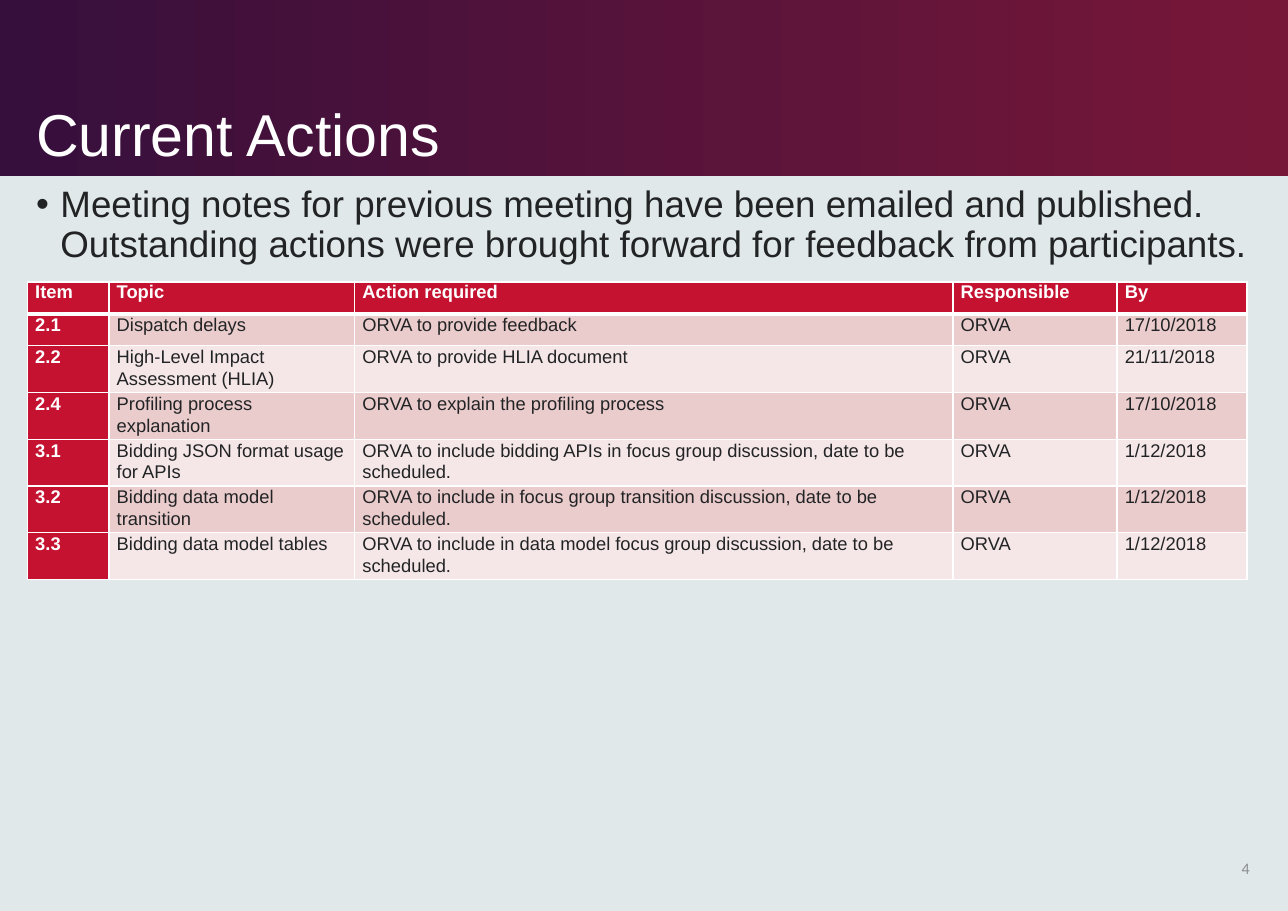
from lxml.etree import SubElement
from pptx import Presentation
from pptx.dml.color import RGBColor
from pptx.enum.shapes import MSO_SHAPE as SHAPE
from pptx.enum.text import MSO_ANCHOR as ANCHOR, PP_ALIGN as ALIGN
from pptx.oxml.ns import qn
from pptx.util import Inches, Pt

WHITE, INK, GREY, RED = "FFFFFF", "222324", "8D8D8E", "C41230"
BANDS = ["F5E7E8", "EACCCD"]
COLUMN_WIDTHS = [0.74, 2.23, 5.43, 1.49, 1.18]
ROW_HEIGHT = 0.29
ACTIONS = [
    ["Item", "Topic", "Action required", "Responsible", "By"],
    ["2.1", "Dispatch delays", "ORVA to provide feedback", "ORVA", "17/10/2018"],
    ["2.2", "High-Level Impact Assessment (HLIA)", "ORVA to provide HLIA document",
     "ORVA", "21/11/2018"],
    ["2.4", "Profiling process explanation", "ORVA to explain the profiling process",
     "ORVA", "17/10/2018"],
    ["3.1", "Bidding JSON format usage for APIs",
     "ORVA to include bidding APIs in focus group discussion, date to be scheduled.",
     "ORVA", "1/12/2018"],
    ["3.2", "Bidding data model transition",
     "ORVA to include in focus group transition discussion, date to be scheduled.",
     "ORVA", "1/12/2018"],
    ["3.3", "Bidding data model tables",
     "ORVA to include in data model focus group discussion, date to be scheduled.",
     "ORVA", "1/12/2018"],
]


def rgb(value):
    return RGBColor.from_string(value)


class SlideBuilder:
    def __init__(self, slide, font="Arial"):
        self.slide = slide
        self.font = font

    def background(self, color):
        fill = self.slide.background.fill
        fill.solid()
        fill.fore_color.rgb = rgb(color)

    def gradient_band(self, x, y, w, h, colors):
        sp = self.slide.shapes.add_shape(
            SHAPE.RECTANGLE, Inches(x), Inches(y), Inches(w), Inches(h))
        sp.shadow.inherit = False
        sp.line.fill.background()
        sp.fill.gradient()
        sp.fill.gradient_angle = 0
        for stop, color in zip(sp.fill.gradient_stops, colors):
            stop.color.rgb = rgb(color)

    def style(self, p, size, color, bold=False, font=None):
        for r in p.runs:
            r.font.name = font or self.font
            r.font.size = Pt(size)
            r.font.bold = bold
            r.font.color.rgb = rgb(color)

    def text(self, text, x, y, w, h, size, color, font=None,
             anchor=ANCHOR.TOP, align=ALIGN.LEFT, spacing=None):
        """Add a wrapped text box and return its paragraph."""
        box = self.slide.shapes.add_textbox(Inches(x), Inches(y), Inches(w), Inches(h))
        tf = box.text_frame
        tf.word_wrap = True
        tf.vertical_anchor = anchor
        tf.text = text
        p = tf.paragraphs[0]
        p.alignment = align
        p.line_spacing = spacing
        self.style(p, size, color, font=font)
        return p

    def bullet(self, p, indent, space_before):
        p.space_before = Pt(space_before)
        pPr = p._p.get_or_add_pPr()
        pPr.set("marL", str(Inches(indent)))
        pPr.set("indent", str(-Inches(indent)))
        SubElement(pPr, qn("a:buFont"), typeface="Arial")
        SubElement(pPr, qn("a:buChar"), char="•")

    def borders(self, cell, **widths):
        """Draw white borders; widths are points for the sides L, R, T and B."""
        tcPr = cell._tc.get_or_add_tcPr()
        for side, width in widths.items():
            ln = SubElement(tcPr, qn(f"a:ln{side}"), w=str(Pt(width)))
            fill = SubElement(ln, qn("a:solidFill"))
            SubElement(fill, qn("a:srgbClr"), val=WHITE)

    def cell(self, cell, text, row, col):
        heading = row == 0 or col == 0
        self.borders(cell, L=1, R=1, T=3 if row == 1 else 1, B=3 if row == 0 else 1)
        cell.fill.solid()
        cell.fill.fore_color.rgb = rgb(RED if heading else BANDS[row % 2])
        cell.margin_left = cell.margin_right = Inches(0.07)
        cell.margin_top = cell.margin_bottom = 0
        cell.text = text
        p = cell.text_frame.paragraphs[0]
        p.space_before = p.space_after = Pt(6)
        if row:
            p.line_spacing = 1.06
        self.style(p, 12, WHITE if heading else INK, bold=heading)

    def table(self, rows, x, y, widths, row_height):
        frame = self.slide.shapes.add_table(
            len(rows), len(widths), Inches(x), Inches(y),
            Inches(sum(widths)), Inches(row_height * len(rows)))
        table = frame.table
        for column, width in zip(table.columns, widths):
            column.width = Inches(width)
        for i, values in enumerate(rows):
            table.rows[i].height = Inches(row_height)
            for j, value in enumerate(values):
                self.cell(table.cell(i, j), value, i, j)


def main():
    prs = Presentation()
    prs.slide_width, prs.slide_height = Inches(11.69), Inches(8.27)
    s = SlideBuilder(prs.slides.add_slide(prs.slide_layouts[6]))
    s.background("E0E8EA")
    s.gradient_band(0, 0, 11.69, 1.6, ["360F3C", "771738"])
    s.text("Current Actions", 0.23, 0.16, 8.63, 1.43, 38.6, WHITE,
           anchor=ANCHOR.BOTTOM, spacing=0.9)
    s.table(ACTIONS, 0.25, 2.56, COLUMN_WIDTHS, ROW_HEIGHT)
    s.text("4", 10.89, 7.66, 0.55, 0.44, 10.5, GREY, font="Calibri",
           anchor=ANCHOR.MIDDLE, align=ALIGN.RIGHT)
    summary = s.text(
        "Meeting notes for previous meeting have been emailed and published. "
        "Outstanding actions were brought forward for feedback from participants.",
        0.23, 1.64, 11.22, 6.24, 24, INK, spacing=0.9)
    s.bullet(summary, 0.22, 8.8)
    prs.save("out.pptx")


if __name__ == "__main__":
    main()
